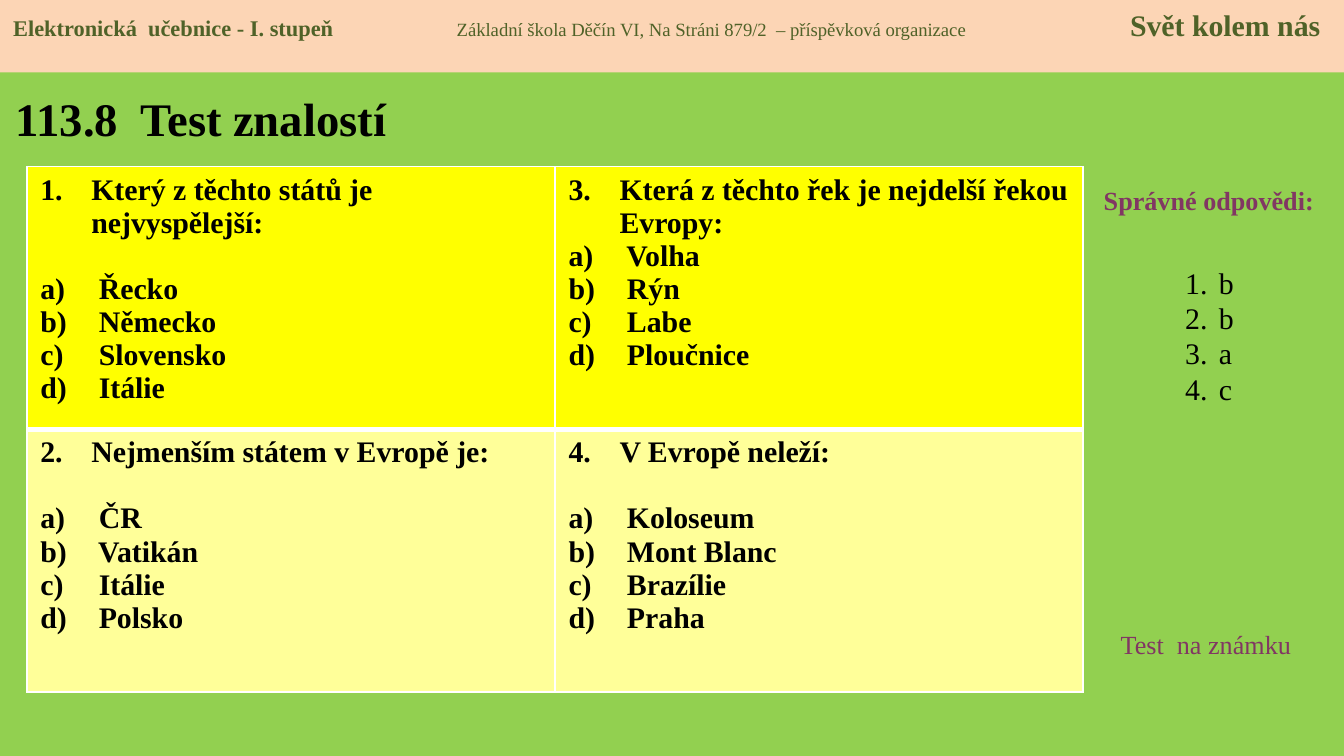
from dataclasses import dataclass
from typing import Optional

from lxml.etree import SubElement
from pptx import Presentation
from pptx.dml.color import RGBColor
from pptx.enum.shapes import MSO_SHAPE as Shape
from pptx.enum.text import MSO_ANCHOR as Anchor, PP_ALIGN as Align
from pptx.oxml.ns import qn
from pptx.util import Inches, Pt


@dataclass(frozen=True)
class Theme:
    font: str = "Times New Roman"
    page: str = "92D050"
    band: str = "FCD5B5"
    band_text: str = "4F6228"
    ink: str = "000000"
    accent: str = "813763"
    border: str = "FFFFFF"
    rows: tuple = ("FFFF00", "FFFF99")
    title: int = 25
    body: int = 16
    note: int = 14
    school: int = 10
    book: int = 12
    cell_line: float = 17.75
    key_line: float = 19


@dataclass(frozen=True)
class Question:
    number: int
    text: str
    answers: tuple
    gap: bool = True


THEME = Theme()
QUESTIONS = (
    Question(1, "Který z těchto států je nejvyspělejší:",
             ("Řecko", "Německo", "Slovensko", "Itálie")),
    Question(3, "Která z těchto řek je nejdelší řekou Evropy:",
             ("Volha", "Rýn", "Labe", "Ploučnice"), gap=False),
    Question(2, "Nejmenším státem v Evropě je:",
             ("ČR", "Vatikán", "Itálie", "Polsko")),
    Question(4, "V Evropě neleží:",
             ("Koloseum", "Mont Blanc", "Brazílie", "Praha")),
)
CORRECT = ("b", "b", "a", "c")


def write(para, text: str, *, size: float, color: str = THEME.ink,
          bold: bool = False, align: Optional[Align] = None,
          line: Optional[float] = None, before: float = 0) -> None:
    """Add a formatted span to a paragraph."""
    span = para.add_run()
    span.text = text
    span.font.name = THEME.font
    span.font.size = Pt(size)
    span.font.bold = bold
    span.font.color.rgb = RGBColor.from_string(color)
    if align is not None:
        para.alignment = align
    if line:
        para.line_spacing = Pt(line)
    if before:
        para.space_before = Pt(before)


def number(para, style: str, indent: float, start: int = 1) -> None:
    """Give a paragraph automatic numbering with a hanging indent."""
    props = para._p.get_or_add_pPr()
    props.set("marL", str(Inches(indent)))
    props.set("indent", str(-Inches(indent)))
    mark = SubElement(props, qn("a:buAutoNum"), type=style)
    if start > 1:
        mark.set("startAt", str(start))


def add_box(page, left: float, top: float, width: float, height: float,
            anchor: Anchor = Anchor.TOP, wrap: bool = True):
    box = page.shapes.add_textbox(Inches(left), Inches(top),
                                  Inches(width), Inches(height))
    box.text_frame.word_wrap = wrap
    box.text_frame.vertical_anchor = anchor
    return box.text_frame


def set_border(cell, side: str, width: float) -> None:
    props = cell._tc.get_or_add_tcPr()
    edge = SubElement(props, qn(f"a:ln{side}"), w=str(Pt(width)))
    fill = SubElement(edge, qn("a:solidFill"))
    SubElement(fill, qn("a:srgbClr"), val=THEME.border)


def fill_cell(cell, question: Question, row: int) -> None:
    for side in "LRTB":
        divider = (row, side) in ((0, "B"), (1, "T"))
        set_border(cell, side, 3 if divider else 1)
    cell.fill.solid()
    cell.fill.fore_color.rgb = RGBColor.from_string(THEME.rows[row])
    style = dict(size=THEME.body, bold=True, line=THEME.cell_line)
    para = cell.text_frame.paragraphs[0]
    write(para, question.text, **style)
    number(para, "arabicPeriod", 0.38, question.number)
    for index, answer in enumerate(question.answers):
        para = cell.text_frame.add_paragraph()
        gap = THEME.cell_line if question.gap and index == 0 else 0
        write(para, f" {answer}", before=gap, **style)
        number(para, "alphaLcParenR", 0.38)


def add_quiz(page) -> None:
    frame = page.shapes.add_table(2, 2, Inches(0.2), Inches(1.24),
                                  Inches(7.86), Inches(3.91))
    for index, question in enumerate(QUESTIONS):
        row, column = divmod(index, 2)
        fill_cell(frame.table.cell(row, column), question, row)


def add_header(page) -> None:
    band = page.shapes.add_shape(Shape.RECTANGLE, 0, 0, Inches(10), Inches(0.54))
    band.shadow.inherit = False
    band.fill.solid()
    band.fill.fore_color.rgb = RGBColor.from_string(THEME.band)
    band.line.fill.background()
    band.text_frame.word_wrap = True
    band.text_frame.vertical_anchor = Anchor.TOP
    para = band.text_frame.paragraphs[0]
    para.alignment = Align.LEFT
    stops = SubElement(para._p.get_or_add_pPr(), qn("a:tabLst"))
    for place in (3.3, 8.31):
        SubElement(stops, qn("a:tab"), pos=str(Inches(place)), algn="l")
    for text, size, bold in (
        ("Elektronická  učebnice - I. stupeň\t", THEME.book, True),
        ("Základní škola Děčín VI, Na Stráni 879/2  – příspěvková organizace\t",
         THEME.school, False),
        ("Svět kolem nás", THEME.body, True),
    ):
        write(para, text, size=size, bold=bold, color=THEME.band_text)


def add_key(page) -> None:
    heading = add_box(page, 8.05, 1.32, 1.89, 0.34, wrap=False)
    write(heading.paragraphs[0], "Správné odpovědi:", size=THEME.note,
          color=THEME.accent, bold=True, align=Align.CENTER)
    answers = add_box(page, 8.72, 1.92, 0.55, 1.2)
    for index, letter in enumerate(CORRECT):
        para = answers.add_paragraph() if index else answers.paragraphs[0]
        write(para, letter, size=THEME.body, line=THEME.key_line)
        number(para, "arabicPeriod", 0.25)
    footer = add_box(page, 8.24, 4.63, 1.57, 0.34, wrap=False)
    write(footer.paragraphs[0], "Test  na známku", size=THEME.note,
          color=THEME.accent)


def main() -> None:
    # Widescreen page, 16:9
    deck = Presentation()
    deck.slide_width = Inches(10)
    deck.slide_height = Inches(10) * 9 // 16
    page = deck.slides.add_slide(deck.slide_layouts[6])
    page.background.fill.solid()
    page.background.fill.fore_color.rgb = RGBColor.from_string(THEME.page)

    # Title
    title = add_box(page, 0.02, 0.55, 3.19, 0.65, Anchor.MIDDLE)
    write(title.paragraphs[0], "113.8  Test znalostí", size=THEME.title, bold=True)

    # Quiz, answer key and header band
    add_quiz(page)
    add_key(page)
    add_header(page)
    deck.save("out.pptx")


if __name__ == "__main__":
    main()
